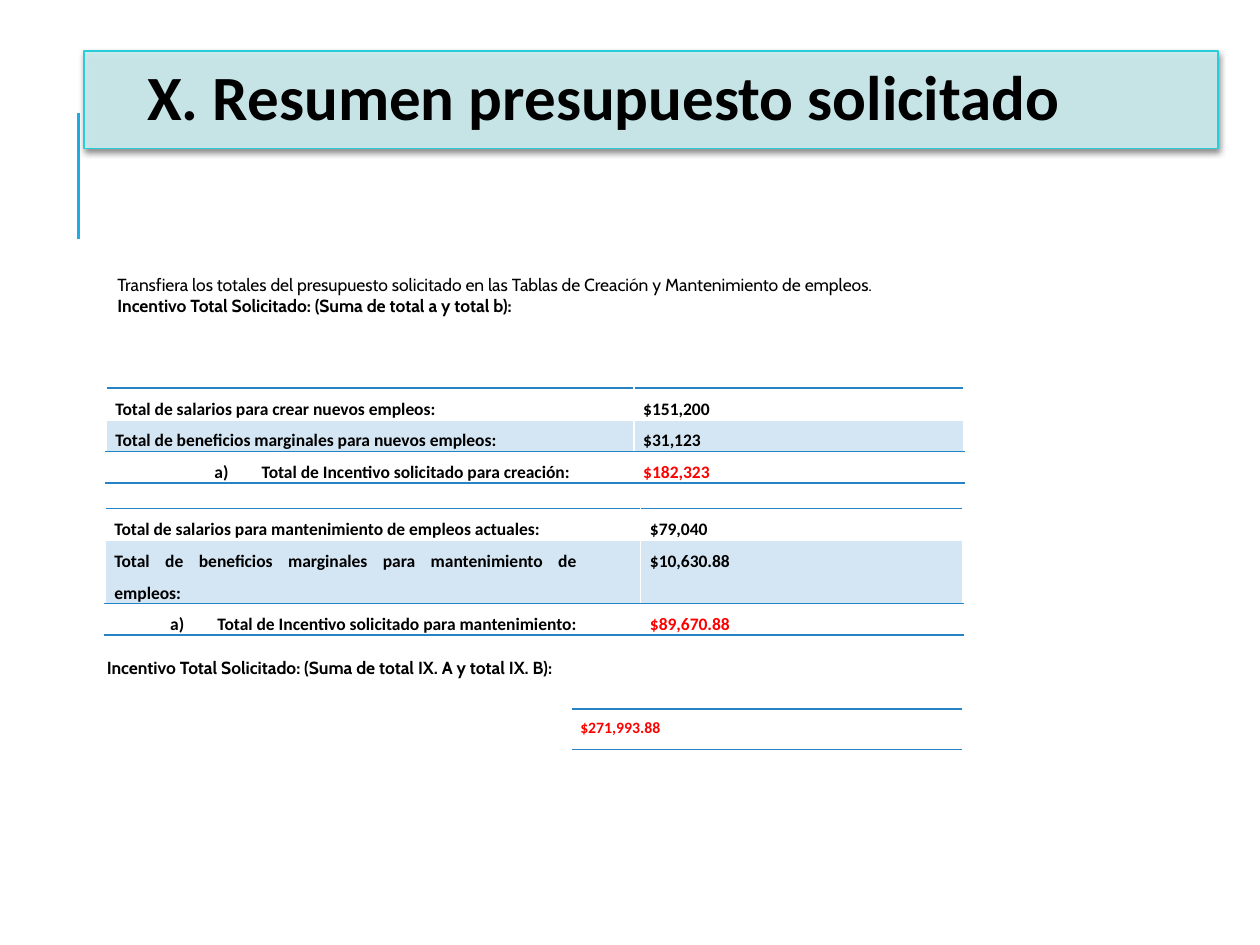
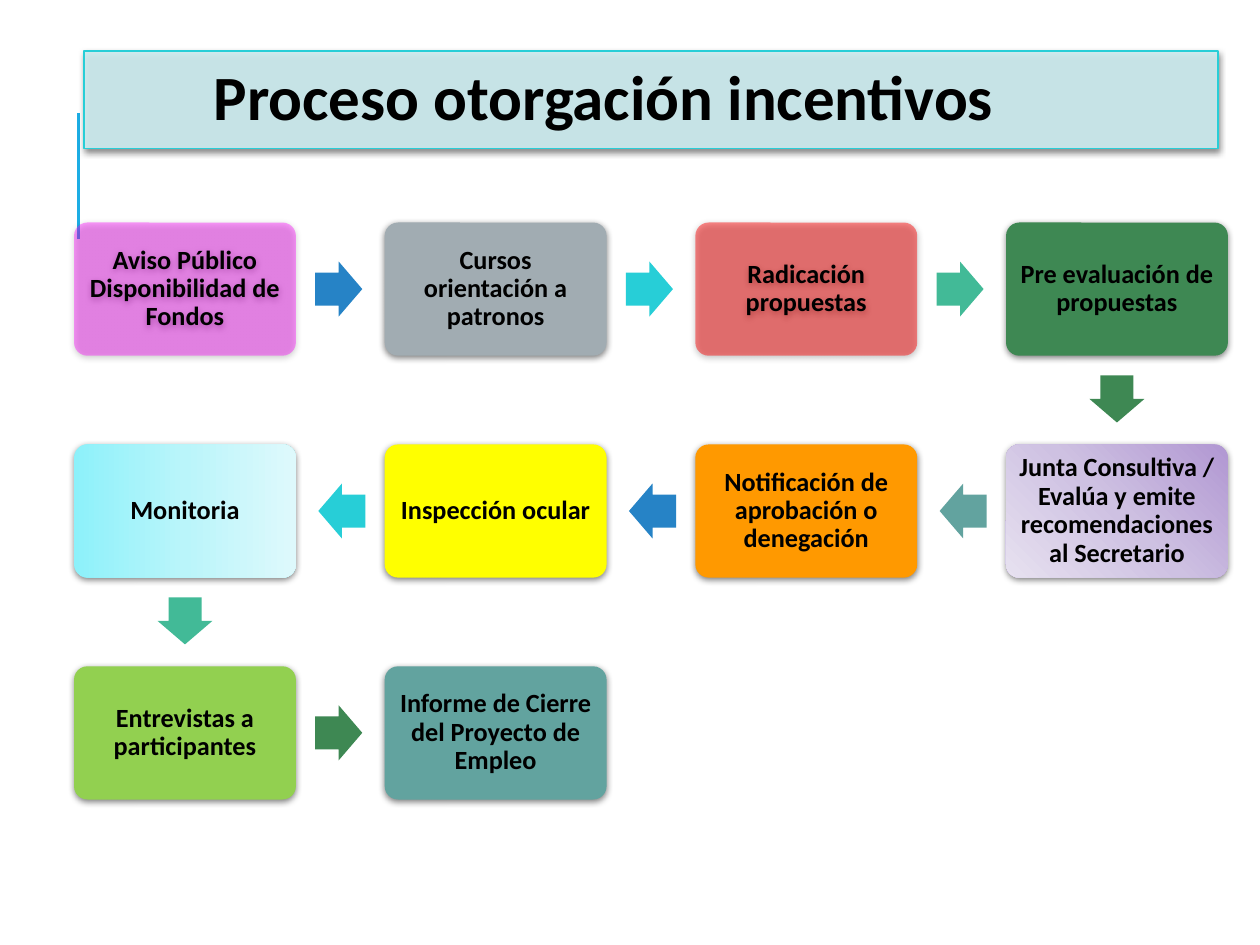
"""Build the budget summary and incentive process slides."""
import copy
import dataclasses

import lxml.etree
import pptx
import pptx.dml.color
import pptx.enum.shapes
import pptx.enum.text
import pptx.oxml.ns
import pptx.util

Pt = pptx.util.Pt
ALIGN = pptx.enum.text.PP_ALIGN
ANCHOR = pptx.enum.text.MSO_ANCHOR
SHAPE = pptx.enum.shapes.MSO_SHAPE


@dataclasses.dataclass(frozen=True)
class Theme:
    """Colours, fonts and type sizes of the deck."""
    ink: str = "000000"
    total: str = "FF0000"
    accent: str = "1CADE4"
    bar: str = "CDEDF0"
    blue: str = "2683C6"
    cyan: str = "27CED7"
    mint: str = "42BA97"
    green: str = "3E8853"
    teal: str = "62A39F"
    row_tint: str = "D4E6F4"
    main_font: str = "Calibri"
    note_font: str = "Cabin"
    title_size: float = 36
    step_size: float = 15
    body_size: float = 10
    sum_size: float = 9


THEME = Theme()
TITLE_FORMAT = {"alignment": ALIGN.CENTER, "line_spacing": 0.9,
                "space_before": Pt(12), "space_after": Pt(2)}
STEP_FORMAT = {"alignment": ALIGN.CENTER, "line_spacing": 0.9}
LABEL_FORMAT = {"alignment": ALIGN.JUSTIFY, "line_spacing": 1.5}
TOTAL_FORMAT = {"alignment": ALIGN.RIGHT, "line_spacing": 1.5}

CREATION_ROWS = [
    ("Total de salarios para crear nuevos empleos:", "$151,200"),
    ("Total de beneficios marginales para nuevos empleos:", "$31,123"),
    ("Total de Incentivo solicitado para creación:", "$182,323"),
]
UPKEEP_ROWS = [
    ("Total de salarios para mantenimiento de empleos actuales:", "$79,040"),
    ("Total de beneficios marginales para mantenimiento de empleos:", "$10,630.88"),
    ("Total de Incentivo solicitado para mantenimiento:", "$89,670.88"),
]

STEPS = [
    ("Aviso Público Disponibilidad de Fondos", {"color": "FF00FF", "alpha": 38}),
    ("Cursos orientación a patronos", {"color": "A1ACB2"}),
    ("Radicación propuestas", {"color": "FF0000", "alpha": 45}),
    ("Pre evaluación de propuestas", {"color": THEME.green}),
    ("Junta Consultiva / Evalúa y emite recomendaciones al Secretario",
     {"stops": ("B197D2", "CEC1E2", "E7E1F0"), "angle": 225}),
    ("Notificación de aprobación o denegación", {"color": "FF9900"}),
    ("Inspección ocular", {"color": "FFFF00"}),
    ("Monitoria", {"stops": ("8DF1FA", "BAF5FA", "DEF9FC"), "angle": 0}),
    ("Entrevistas a participantes", {"color": "92D050"}),
    ("Informe de Cierre del Proyecto de Empleo", {"color": THEME.teal}),
]
ARROW_COLORS = [THEME.blue, THEME.cyan, THEME.mint, THEME.green, THEME.teal]
COLUMNS = 4
STEP_WIDTH, STEP_HEIGHT = 126.8, 76.1
FIRST_X, FIRST_Y = 105.7, 165.2
ARROW_WIDTH, ARROW_HEIGHT = 26.9, 31.4


def rgb(color):
    """Return a colour object for a hex string."""
    return pptx.dml.color.RGBColor.from_string(color)


def add_xml(parent, tag, **attributes):
    """Append a drawing element to a parent and return it."""
    values = {name: str(value) for name, value in attributes.items()}
    return lxml.etree.SubElement(parent, pptx.oxml.ns.qn(tag), values)


def apply_format(target, values):
    """Set each attribute named in a dict of values."""
    for name, value in values.items():
        setattr(target, name, value)


def set_margins(target, left, top, right, bottom):
    """Set the four inner margins of a text frame or cell in points."""
    for side, length in zip(("left", "top", "right", "bottom"), (left, top, right, bottom)):
        setattr(target, f"margin_{side}", Pt(length))


def write(para, text, size, values, font=THEME.main_font, color=THEME.ink, bold=True):
    """Write one formatted span into a paragraph."""
    apply_format(para, values)
    span = para.add_run()
    span.text = text
    apply_format(span.font, {"name": font, "size": Pt(size), "bold": bold})
    span.font.color.rgb = rgb(color)


def paint(shape, color=None, alpha=100, stops=(), angle=0):
    """Fill a shape with a colour or an even gradient."""
    if stops:
        shape.fill.gradient()
        stop_list = shape._element.spPr.find(".//" + pptx.oxml.ns.qn("a:gsLst"))
        while len(stop_list) < len(stops):
            stop_list.append(copy.deepcopy(stop_list[0]))
        for index, stop in enumerate(shape.fill.gradient_stops):
            stop.position = index / (len(stops) - 1)
            stop.color.rgb = rgb(stops[index])
        shape.fill.gradient_angle = angle
        return
    shape.fill.solid()
    shape.fill.fore_color.rgb = rgb(color)
    if alpha < 100:
        node = shape._element.spPr.find(".//" + pptx.oxml.ns.qn("a:srgbClr"))
        add_xml(node, "a:alpha", val=alpha * 1000)


def add_block(page, kind, left, top, width, height, fill, line=None, shadow=True):
    """Add a filled preset shape with optional outline and shadow."""
    shape = page.shapes.add_shape(kind, Pt(left), Pt(top), Pt(width), Pt(height))
    paint(shape, **fill)
    if line:
        shape.line.color.rgb = rgb(line)
        shape.line.width = Pt(0.75)
    else:
        shape.line.fill.background()
    shape.shadow.inherit = False
    if shadow:
        effects = shape._element.spPr.find(pptx.oxml.ns.qn("a:effectLst"))
        outer = add_xml(effects, "a:outerShdw", blurRad=Pt(4), dist=Pt(1),
                        dir=5400000, rotWithShape=0)
        add_xml(add_xml(outer, "a:srgbClr", val=THEME.ink), "a:alpha", val=50000)
    return shape


def add_text_box(page, left, top, width, height):
    """Add a wrapping text box and return its frame."""
    box = page.shapes.add_textbox(Pt(left), Pt(top), Pt(width), Pt(height))
    box.text_frame.word_wrap = True
    return box.text_frame


def add_title_page(deck, title):
    """Add a page with the accent line, title bar and title."""
    page = deck.slides.add_slide(deck.slide_layouts[6])
    accent = page.shapes.add_connector(pptx.enum.shapes.MSO_CONNECTOR.STRAIGHT,
                                       Pt(44.8), Pt(136.8), Pt(44.8), Pt(64.8))
    accent.line.color.rgb = rgb(THEME.accent)
    accent.line.width = Pt(1.5)
    add_xml(accent._element.spPr, "a:effectLst")
    add_block(page, SHAPE.RECTANGLE, 48, 29.2, 648, 55.9,
              {"color": THEME.bar, "alpha": 90}, line=THEME.cyan)
    frame = add_text_box(page, 60, 18, 570, 78)
    frame.vertical_anchor = ANCHOR.MIDDLE
    set_margins(frame, 3.6, 3.6, 3.6, 3.6)
    write(frame.paragraphs[0], title, THEME.title_size, TITLE_FORMAT)
    return page


def rule_cell(cell):
    """Draw the top and bottom rules of a cell."""
    properties = cell._tc.get_or_add_tcPr()
    for index, tag in enumerate(("a:lnT", "a:lnB")):
        line = add_xml(properties, tag, w=Pt(1))
        properties.remove(line)
        properties.insert(index, line)
        add_xml(add_xml(line, "a:solidFill"), "a:srgbClr", val=THEME.blue)


def add_plain_table(page, left, top, widths, heights):
    """Add an unstyled table with tinted odd rows and ruled even rows."""
    frame = page.shapes.add_table(len(heights), len(widths), Pt(left), Pt(top),
                                  Pt(sum(widths)), Pt(sum(heights)))
    table = frame.table
    apply_format(table, {"first_row": False, "horz_banding": False})
    for column, width in zip(table.columns, widths):
        column.width = Pt(width)
    for index, (row, height) in enumerate(zip(table.rows, heights)):
        row.height = Pt(height)
        for cell in row.cells:
            set_margins(cell, 5.4, 0, 5.4, 0)
            if index % 2:
                cell.fill.solid()
                cell.fill.fore_color.rgb = rgb(THEME.row_tint)
            else:
                cell.fill.background()
                rule_cell(cell)
    return table


def add_budget_table(page, left, top, widths, heights, entries):
    """Add a budget table whose last row is a lettered total."""
    table = add_plain_table(page, left, top, widths, heights)
    for index, (label, amount) in enumerate(entries):
        is_total = index == len(entries) - 1
        label_cell, amount_cell = table.rows[index].cells
        label_cell.margin_right = Pt(36.8)
        para = label_cell.text_frame.paragraphs[0]
        write(para, label, THEME.body_size, TOTAL_FORMAT if is_total else LABEL_FORMAT)
        if is_total:
            properties = para._p.get_or_add_pPr()
            properties.set("marL", str(Pt(27)))
            properties.set("indent", str(Pt(-27)))
            add_xml(properties, "a:buFont", typeface="+mj-lt")
            add_xml(properties, "a:buAutoNum", type="alphaLcParenR")
        write(amount_cell.text_frame.paragraphs[0], amount, THEME.body_size, LABEL_FORMAT,
              color=THEME.total if is_total else THEME.ink)


def build_budget(deck):
    """Build the requested budget summary."""
    page = add_title_page(deck, "X. Resumen presupuesto solicitado")
    intro = add_text_box(page, 60, 153.2, 525, 32)
    write(intro.paragraphs[0], "Transfiera los totales del presupuesto solicitado en las "
          "Tablas de Creación y Mantenimiento de empleos.",
          THEME.body_size, {}, font=THEME.note_font, bold=False)
    write(intro.add_paragraph(), "Incentivo Total Solicitado: (Suma de total a y total b):",
          THEME.body_size, {}, font=THEME.note_font)
    add_budget_table(page, 60.6, 221.8, (301.6, 188.6), (18, 18, 18), CREATION_ROWS)
    add_budget_table(page, 60, 290.7, (306, 184.4), (18, 36, 18), UPKEEP_ROWS)
    note = add_text_box(page, 54, 365.8, 378, 23)
    write(note.paragraphs[0], "Incentivo Total Solicitado: (Suma de total IX. A y total IX. B):",
          THEME.body_size, {"line_spacing": 1.5}, font=THEME.note_font)
    grand_total = add_plain_table(page, 326.2, 405.2, (224,), (23,))
    write(grand_total.cell(0, 0).text_frame.paragraphs[0], "$271,993.88", THEME.sum_size,
          LABEL_FORMAT, color=THEME.total)


def step_center(index):
    """Return the centre of a step on the back-and-forth route."""
    row, column = divmod(index, COLUMNS)
    if row % 2:
        column = COLUMNS - 1 - column
    return FIRST_X + column * STEP_WIDTH * 1.4, FIRST_Y + row * STEP_WIDTH


def add_step(page, index, text, fill):
    """Add one rounded process step with its text."""
    x, y = step_center(index)
    step = add_block(page, SHAPE.ROUNDED_RECTANGLE, x - STEP_WIDTH / 2, y - STEP_HEIGHT / 2,
                     STEP_WIDTH, STEP_HEIGHT, fill)
    step.adjustments[0] = 0.1
    frame = step.text_frame
    apply_format(frame, {"word_wrap": True, "vertical_anchor": ANCHOR.MIDDLE})
    set_margins(frame, 4.5, 4.5, 4.5, 4.5)
    write(frame.paragraphs[0], text, THEME.step_size, STEP_FORMAT)


def add_step_arrow(page, index):
    """Add the arrow that leads from a step to the next one."""
    (x, y), (next_x, next_y) = step_center(index), step_center(index + 1)
    center_x = x + (next_x - x) * 0.495
    center_y = y + (next_y - y) * 0.495
    color = ARROW_COLORS[index % len(ARROW_COLORS)]
    arrow = add_block(page, SHAPE.RIGHT_ARROW, center_x - ARROW_WIDTH / 2,
                      center_y - ARROW_HEIGHT / 2, ARROW_WIDTH, ARROW_HEIGHT,
                      {"color": color}, shadow=False)
    arrow.adjustments[0] = 0.6
    arrow.adjustments[1] = 0.5
    arrow.rotation = 90 if next_y > y else 180 if next_x < x else 0


def build_process(deck):
    """Build the incentive award process."""
    page = add_title_page(deck, "Proceso otorgación incentivos")
    for index, (text, fill) in enumerate(STEPS):
        add_step(page, index, text, fill)
        if index < len(STEPS) - 1:
            add_step_arrow(page, index)


def main():
    """Create and save the deck."""
    deck = pptx.Presentation()
    apply_format(deck, {"slide_width": Pt(720), "slide_height": Pt(540)})
    build_budget(deck)
    build_process(deck)
    deck.save("out.pptx")


if __name__ == "__main__":
    main()
